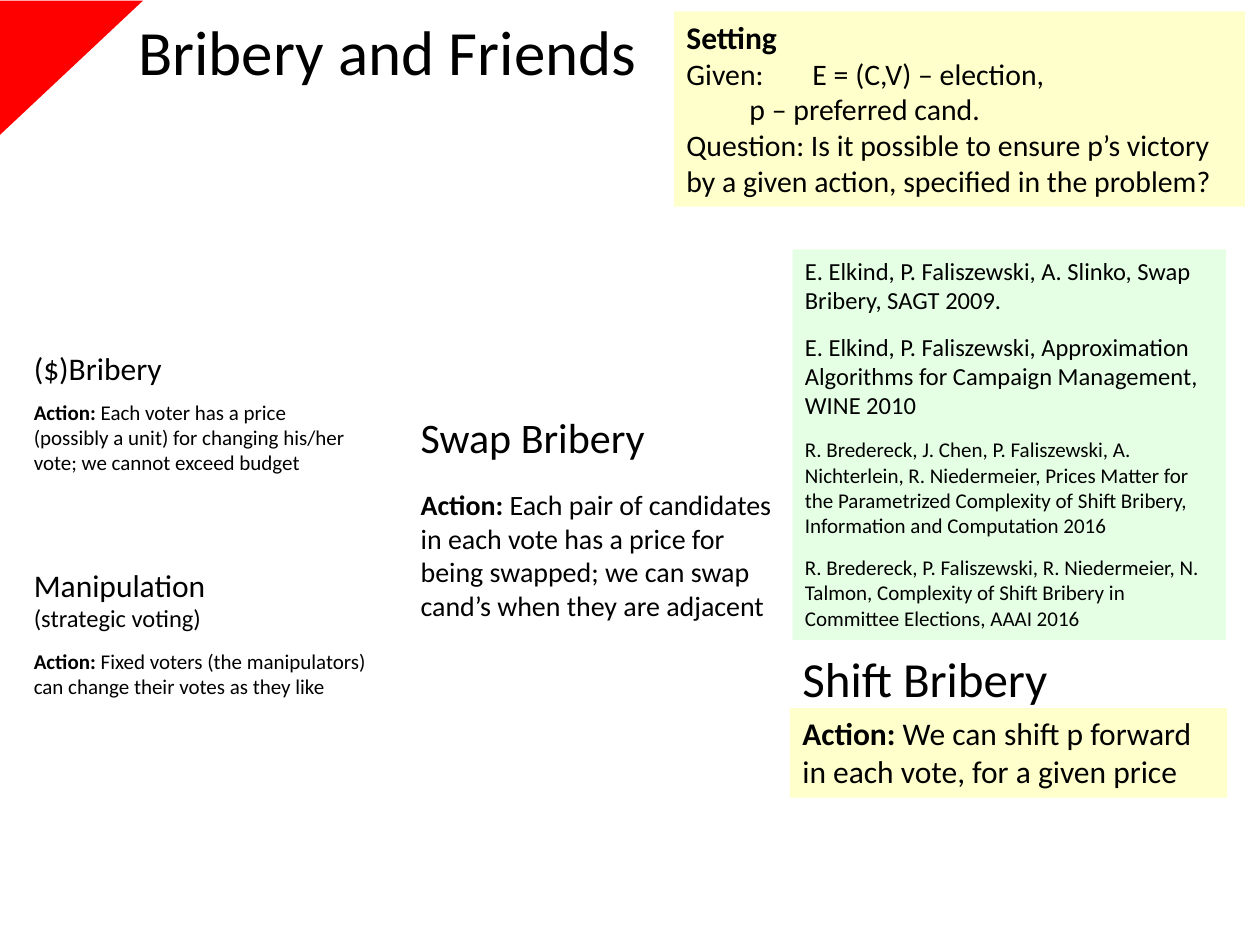
import pptx
import pptx.util
import pptx.dml.color
import pptx.enum.shapes
import pptx.enum.text

Inches = pptx.util.Inches
Pt = pptx.util.Pt
SHAPE = pptx.enum.shapes.MSO_SHAPE
ANCHOR = pptx.enum.text.MSO_ANCHOR
ALIGN = pptx.enum.text.PP_ALIGN

FONT = "Calibri"
BLACK = "000000"
RED = "FF0000"
YELLOW = "FFFFCC"
GREEN = "E5FFE5"

REFS = [
    (14, "E. Elkind, P. Faliszewski, A. Slinko, Swap Bribery, SAGT 2009."),
    (14, "E. Elkind, P. Faliszewski, Approximation Algorithms for Campaign "
         "Management, WINE 2010"),
    (12, "R. Bredereck, J. Chen, P. Faliszewski, A. Nichterlein, R. Niedermeier, "
         "Prices Matter for the Parametrized Complexity of Shift Bribery, "
         "Information and Computation 2016"),
    (12, "R. Bredereck, P. Faliszewski, R. Niedermeier, N. Talmon, Complexity of "
         "Shift Bribery in Committee Elections, AAAI 2016"),
]


def color(code):
    return pptx.dml.color.RGBColor.from_string(code)


def style(run, size, bold=False):
    run.font.name = FONT
    run.font.size = Pt(size)
    run.font.bold = bold
    run.font.color.rgb = color(BLACK)


def write(shape, lines, gap=0, anchor=ANCHOR.TOP):
    """Fill a shape with (size, text) lines, gap points apart."""
    frame = shape.text_frame
    frame.word_wrap = True
    frame.vertical_anchor = anchor
    frame.text = "\n".join(text for size, text in lines)
    for para, (size, text) in zip(frame.paragraphs, lines):
        para.alignment = ALIGN.LEFT
        for run in para.runs:
            style(run, size)
    for para in frame.paragraphs[:-1]:
        para.space_after = Pt(gap)
    return frame


def label(slide, box, *lines, anchor=ANCHOR.TOP):
    shape = slide.shapes.add_textbox(*map(Inches, box))
    return write(shape, lines, anchor=anchor)


def block(slide, kind, box, fill):
    shape = slide.shapes.add_shape(kind, *map(Inches, box))
    shape.shadow.inherit = False
    shape.fill.solid()
    shape.fill.fore_color.rgb = color(fill)
    shape.line.fill.background()
    return shape


def panel(slide, box, fill, *lines, gap=0):
    return write(block(slide, SHAPE.RECTANGLE, box, fill), lines, gap)


def action(frame, size, text):
    """Add the text of an action after its bold lead."""
    para = frame.paragraphs[0]
    para.runs[0].font.bold = True
    run = para.add_run()
    run.text = text
    style(run, size)


def main():
    deck = pptx.Presentation()
    deck.slide_width = Inches(10)
    deck.slide_height = Inches(7.5)
    slide = deck.slides.add_slide(deck.slide_layouts[6])

    corner = block(slide, SHAPE.RIGHT_TRIANGLE, (0.03, -0.03, 1.07, 1.14), RED)
    corner.rotation = 90
    label(slide, (1, 0, 4.47, 0.79), (36, "Bribery and Friends"),
          anchor=ANCHOR.MIDDLE)

    setting = panel(
        slide, (5.35, 0.09, 4.53, 1.55), YELLOW,
        (18, "Setting"),
        (17, "Given: \tE = (C,V) – election, \v\tp – preferred cand."),
        (17, "Question: Is it possible to ensure p’s victory by a given action, "
             "specified in the problem?"))
    setting.paragraphs[0].runs[0].font.bold = True

    label(slide, (0.17, 2.72, 2.47, 0.4), (18, "($)Bribery"))
    label(slide, (0.17, 4.44, 2.47, 0.64),
          (18, "Manipulation"), (14, "(strategic voting)"))
    label(slide, (3.24, 3.22, 2.87, 0.5), (24, "Swap Bribery"))
    label(slide, (6.27, 5.1, 2.87, 0.57), (28, "Shift Bribery"))

    lead = "Action: "
    action(label(slide, (0.17, 3.12, 2.74, 0.71), (12, lead)), 12,
           "Each voter has a price (possibly a unit) for changing his/her vote; "
           "we cannot exceed budget")
    action(label(slide, (0.17, 5.1, 2.84, 0.5), (12, lead)), 12,
           "Fixed voters (the manipulators) can change their votes as they like")
    action(label(slide, (3.24, 3.82, 3.05, 1.18), (16, lead)), 16,
           "Each pair of candidates in each vote has a price for being swapped; "
           "we can swap cand’s when they are adjacent")
    action(panel(slide, (6.27, 5.62, 3.47, 0.71), YELLOW, (18, lead)), 18,
           "We can shift p forward in each vote, for a given price")

    panel(slide, (6.29, 1.98, 3.44, 3.1), GREEN, *REFS, gap=9.75)
    deck.save("out.pptx")


if __name__ == "__main__":
    main()
